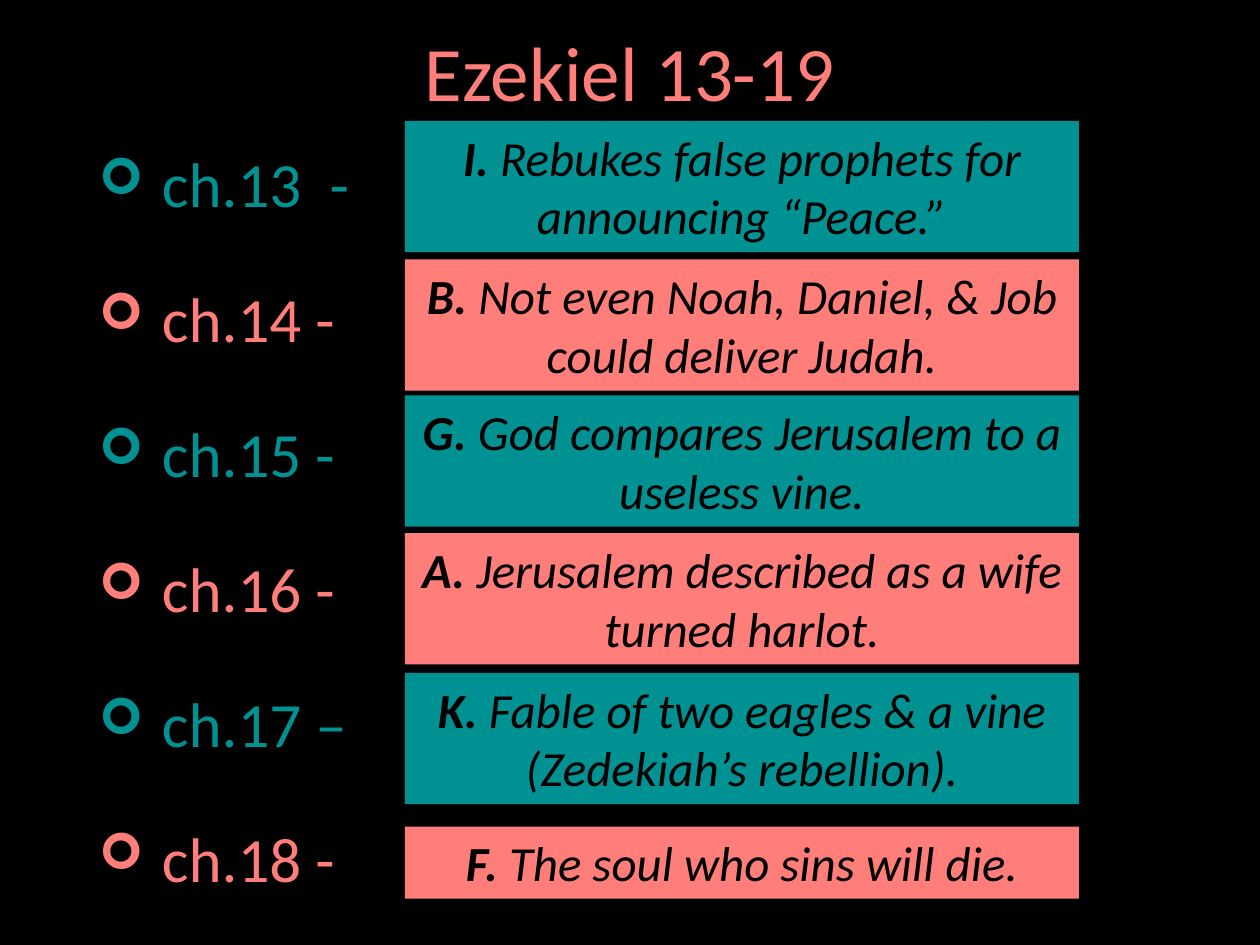
"""Build the Ezekiel 13-19 chapter summary slide."""
from pptx import Presentation
from pptx.dml.color import RGBColor
from pptx.enum.shapes import MSO_SHAPE as SHAPE
from pptx.enum.text import MSO_ANCHOR as ANCHOR, MSO_AUTO_SIZE as AUTO, PP_ALIGN as ALIGN
from pptx.oxml.xmlchemy import OxmlElement as Element
from pptx.util import Pt

TEAL, CORAL, BLACK = "009193", "FF7E79", "000000"


def rgb(value):
    return RGBColor.from_string(value)


def add_run(p, text, size, color, bold=None, italic=None):
    r = p.add_run()
    r.text = text
    r.font.name = "Calibri"
    r.font.size = Pt(size)
    r.font.color.rgb = rgb(color)
    r.font.bold = bold
    r.font.italic = italic


prs = Presentation()
prs.slide_width, prs.slide_height = Pt(720), Pt(540)
s = prs.slides.add_slide(prs.slide_layouts[6])
s.background.fill.solid()
s.background.fill.fore_color.rgb = rgb(BLACK)

tf = s.shapes.add_textbox(Pt(49.5), Pt(11.5), Pt(621), Pt(65)).text_frame
tf.word_wrap = True
tf.vertical_anchor = ANCHOR.MIDDLE
p = tf.paragraphs[0]
p.alignment = ALIGN.CENTER
p.line_spacing = 0.9
add_run(p, "Ezekiel 13-19", 44, CORAL)

chapters = [
    ("ch.13  -", "I. ", "Rebukes false prophets for announcing “Peace.”", 69.1, 75),
    ("ch.14 -", "B. ", "Not even Noah, Daniel, & Job could deliver Judah.", 148.2, 75),
    ("ch.15 -", "G. ", "God compares Jerusalem to a useless vine.", 226, 75),
    ("ch.16 -", "A. ", "Jerusalem described as a wife turned harlot.", 304.7, 75),
    ("ch.17 –", "K. ", "Fable of two eagles & a vine (Zedekiah’s rebellion).", 384.5, 75),
    ("ch.18 -", "F. ", "The soul who sins will die.", 472.4, 41.2),
]

tf = s.shapes.add_textbox(Pt(49.5), Pt(79), Pt(621), Pt(443.5)).text_frame
tf.word_wrap = True
for i, (chapter, letter, summary, top, height) in enumerate(chapters):
    color = CORAL if i % 2 else TEAL

    p = tf.add_paragraph() if i else tf.paragraphs[0]
    p.space_before, p.space_after = Pt(4), Pt(30)
    pPr = p._p.get_or_add_pPr()
    pPr.set("marL", str(Pt(36)))
    pPr.set("indent", str(-Pt(36)))
    for tag, key, value in (("a:buSzPct", "val", "80000"),
                            ("a:buFont", "typeface", "Wingdings"),
                            ("a:buChar", "char", "➢")):
        bullet = Element(tag)
        bullet.set(key, value)
        pPr.append(bullet)
    add_run(p, chapter, 36, color)

    sp = s.shapes.add_shape(SHAPE.RECTANGLE, Pt(231.3), Pt(top), Pt(385.2), Pt(height))
    sp.shadow.inherit = False
    sp.fill.solid()
    sp.fill.fore_color.rgb = rgb(color)
    sp.line.fill.background()
    box = sp.text_frame
    box.word_wrap = True
    box.auto_size = AUTO.SHAPE_TO_FIT_TEXT
    box.vertical_anchor = ANCHOR.TOP
    p = box.paragraphs[0]
    p.alignment = ALIGN.CENTER
    add_run(p, letter, 28, BLACK, True, True)
    add_run(p, summary, 28, BLACK, False, True)

prs.save("out.pptx")
